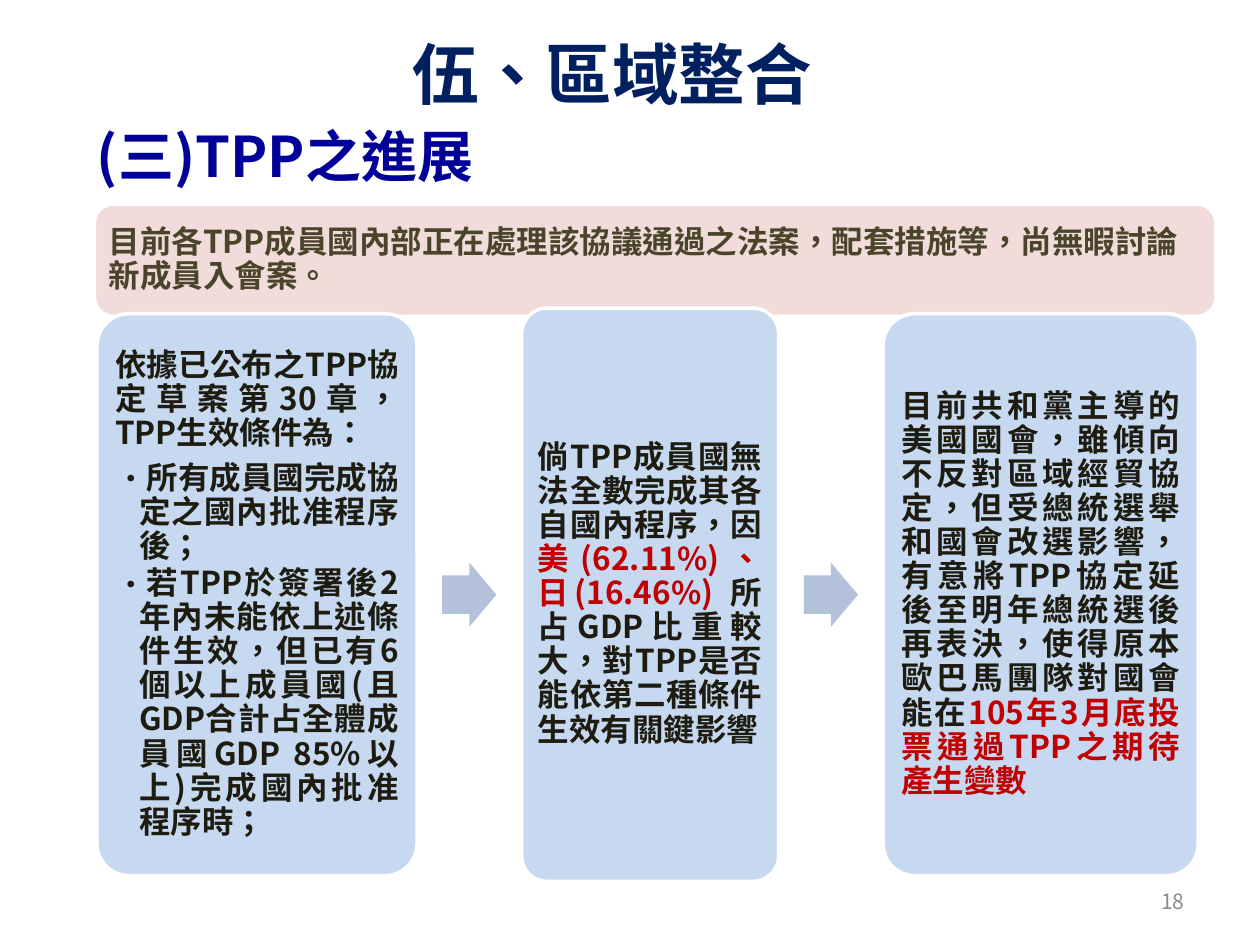
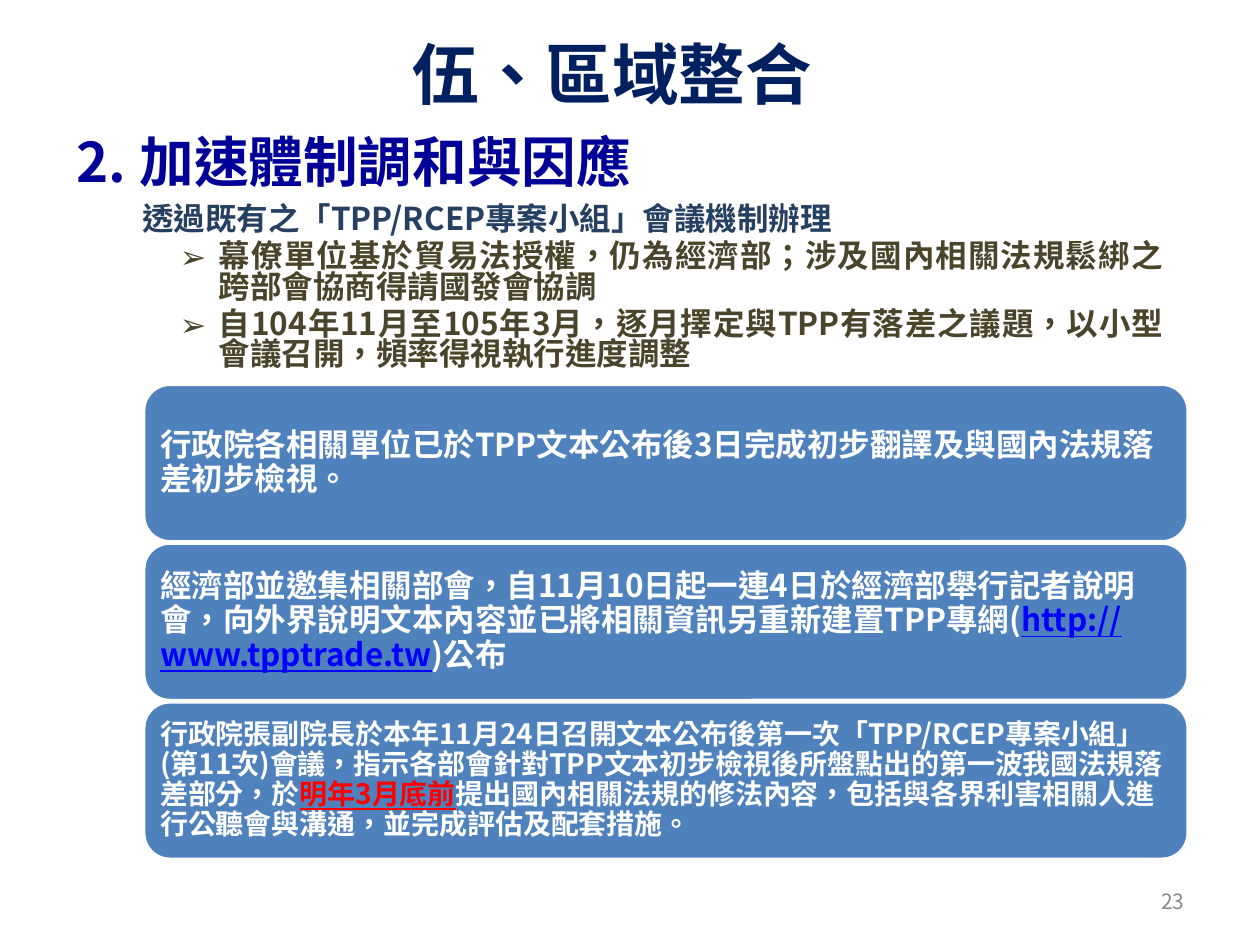
from dataclasses import dataclass
from typing import Optional

from lxml.etree import SubElement
from pptx import Presentation
from pptx.dml.color import RGBColor
from pptx.enum.shapes import MSO_SHAPE
from pptx.enum.text import MSO_ANCHOR, PP_ALIGN
from pptx.oxml.ns import qn
from pptx.util import Inches, Pt

FONT = "Noto Sans CJK SC"
WHITE, NAVY, BLUE, GREY = "FFFFFF", "002060", "000099", "898989"
INK, OLIVE, STEEL = "1E1C11", "4A452A", "254061"
RED, BRIGHT_RED, LINK = "C00000", "FF0000", "0000FF"
PINK, PALE, ARROW, PANEL = "F2DCDB", "C6D9F1", "B3C1DB", "4F81BD"
INSET = 0.07


@dataclass
class Run:
    text: str
    color: Optional[str] = None
    underline: bool = False


@dataclass
class Para:
    runs: list[Run]
    align: PP_ALIGN = PP_ALIGN.LEFT
    line: float = 1.0
    before: float = 0
    after: float = 0
    left: float = 0
    hang: float = 0
    bullet: str = ""
    number: int = 0


@dataclass
class Style:
    color: str
    size: float = 18
    bold: bool = True
    anchor: MSO_ANCHOR = MSO_ANCHOR.MIDDLE
    inset: Optional[float] = None
    wrap: bool = True


@dataclass
class Card:
    width: float
    height: float
    paras: list[Para]


def rgb(color: str) -> RGBColor:
    return RGBColor.from_string(color)


def write(tf, paras: list[Para], style: Style) -> None:
    """Fill a text frame with styled paragraphs."""
    frame = {"word_wrap": style.wrap, "vertical_anchor": style.anchor}
    if style.inset is not None:
        for side in ("left", "top", "right", "bottom"):
            frame[f"margin_{side}"] = Inches(style.inset)
    for name, value in frame.items():
        setattr(tf, name, value)
    for i, para in enumerate(paras):
        p = tf.add_paragraph() if i else tf.paragraphs[0]
        pPr = p._p.get_or_add_pPr()
        # Punctuation stays inside the text area
        layout = {"marL": Inches(para.left), "indent": -Inches(para.hang), "hangingPunct": 0}
        for name, value in layout.items():
            pPr.set(name, str(value))
        if para.bullet:
            SubElement(pPr, qn("a:buFont"), typeface=FONT)
            SubElement(pPr, qn("a:buChar"), char=para.bullet)
        elif para.number:
            SubElement(pPr, qn("a:buAutoNum"), type="arabicPeriod", startAt=str(para.number))
        spacing = {"alignment": para.align, "line_spacing": para.line,
                   "space_before": Pt(para.before), "space_after": Pt(para.after)}
        for name, value in spacing.items():
            setattr(p, name, value)
        for run in para.runs:
            r = p.add_run()
            r.text = run.text
            font = {"name": FONT, "size": Pt(style.size), "bold": style.bold,
                    "underline": run.underline}
            for name, value in font.items():
                setattr(r.font, name, value)
            r.font.color.rgb = rgb(run.color or style.color)
            rPr = r._r.get_or_add_rPr()
            rPr.set("lang", "zh-TW")
            SubElement(rPr, qn("a:ea"), typeface=FONT)


def add_text(slide, x: float, y: float, w: float, h: float,
             paras: list[Para], style: Style) -> None:
    sp = slide.shapes.add_textbox(Inches(x), Inches(y), Inches(w), Inches(h))
    write(sp.text_frame, paras, style)


def add_box(slide, kind: MSO_SHAPE, x: float, y: float, w: float, h: float,
            fill: str, line: Optional[str] = WHITE, adj: tuple = ()):
    sp = slide.shapes.add_shape(kind, Inches(x), Inches(y), Inches(w), Inches(h))
    sp.shadow.inherit = False
    sp.fill.solid()
    sp.fill.fore_color.rgb = rgb(fill)
    if line:
        sp.line.color.rgb = rgb(line)
        sp.line.width = Pt(2)
    else:
        sp.line.fill.background()
    for i, value in enumerate(adj):
        sp.adjustments[i] = value
    return sp


def add_page(prs, number: int):
    """Blank slide with the shared chapter title and page number."""
    slide = prs.slides.add_slide(prs.slide_layouts[6])
    add_text(slide, 3.16, 0.21, 3.4, 0.74,
             [Para([Run("伍、區域整合")], PP_ALIGN.CENTER)],
             Style(NAVY, 38, anchor=MSO_ANCHOR.TOP, wrap=False))
    add_text(slide, 7.17, 6.95, 2.33, 0.4,
             [Para([Run(str(number))], PP_ALIGN.RIGHT)], Style(GREY, 12, False))
    return slide


def block(*runs: Run, align: PP_ALIGN = PP_ALIGN.JUSTIFY) -> Para:
    return Para(list(runs), align, line=0.9, after=6)


def condition(text: str) -> Para:
    return Para([Run(text)], PP_ALIGN.JUSTIFY, line=0.9, after=2,
                left=0.19, hang=0.19, bullet="•")


def task(text: str) -> Para:
    return Para([Run(text, OLIVE)], PP_ALIGN.JUSTIFY, line=0.8, before=4,
                left=0.81, hang=0.31, bullet="➢")


CARDS = [
    Card(2.54, 4.46, [
        block(Run("依據已公布之TPP協定草案第30章，TPP生效條件為：")),
        condition("所有成員國完成協定之國內批准程序後；"),
        condition("若TPP於簽署後2年內未能依上述條件生效，但已有6個以上成員國"
                  "(且GDP合計占全體成員國GDP 85%以上)完成國內批准程序時；"),
    ]),
    Card(2.04, 4.55, [block(
        Run("倘TPP成員國無法全數完成其各自國內程序，因"),
        Run("美(62.11%)、日(16.46%) ", RED),
        Run("所占GDP比重較大，對TPP是否能依第二種條件生效有關鍵影響"),
    )]),
    Card(2.5, 4.46, [block(
        Run("目前共和黨主導的美國國會，雖傾向不反對區域經貿協定，但受總統選舉和國會改選影響，"
            "有意將TPP協定延後至明年總統選後再表決，使得原本歐巴馬團隊對國會能在"),
        Run("105年3月底投票通過TPP之期待產生變數", RED),
    )]),
]

PANELS = [
    (18, [Run("行政院各相關單位已於TPP文本公布後3日完成初步翻譯及與國內法規落差初步檢視。")]),
    (18, [Run("經濟部並邀集相關部會，自11月10日起一連4日於經濟部舉行記者說明會，"
              "向外界說明文本內容並已將相關資訊另重新建置TPP專網("),
          Run("http://www.tpptrade.tw", LINK, True),
          Run(")公布")]),
    (16, [Run("行政院張副院長於本年11月24日召開文本公布後第一次「TPP/RCEP專案小組」(第11次)會議，"
              "指示各部會針對TPP文本初步檢視後所盤點出的第一波我國法規落差部分，於"),
          Run("明年3月底前", BRIGHT_RED, True),
          Run("提出國內相關法規的修法內容，包括與各界利害相關人進行公聽會與溝通，"
              "並完成評估及配套措施。")]),
]


def build_progress(prs) -> None:
    slide = add_page(prs, 18)
    add_text(slide, 0.67, 0.85, 8.69, 0.77,
             [Para([Run("(三)TPP之進展")])], Style(BLUE, 32))
    # Summary band
    band = add_box(slide, MSO_SHAPE.ROUNDED_RECTANGLE, 0.75, 1.62, 8.9, 0.89, PINK)
    write(band.text_frame,
          [block(Run("目前各TPP成員國內部正在處理該協議通過之法案，配套措施等，尚無暇討論新成員入會案。"),
                 align=PP_ALIGN.LEFT)],
          Style(OLIVE, inset=INSET))
    # Cards joined by arrows, all centred on one line
    x, middle, gap, arrow_w, arrow_h = 0.77, 4.72, 0.2, 0.43, 0.51
    for i, card in enumerate(CARDS):
        if i:
            add_box(slide, MSO_SHAPE.RIGHT_ARROW, x + gap, middle - arrow_h / 2,
                    arrow_w, arrow_h, ARROW, None, (0.6, 0.5))
            x += arrow_w + 2 * gap
        sp = add_box(slide, MSO_SHAPE.ROUNDED_RECTANGLE, x, middle - card.height / 2,
                     card.width, card.height, PALE, adj=(0.1,))
        write(sp.text_frame, card.paras, Style(INK, inset=INSET))
        x += card.width


def build_response(prs) -> None:
    slide = add_page(prs, 23)
    add_text(slide, 0.51, 0.92, 9, 0.71,
             [Para([Run("加速體制調和與因應")], left=0.5, hang=0.5, number=2)],
             Style(BLUE, 31.2))
    # Working arrangements
    add_text(slide, 0.83, 1.53, 8.5, 1.5, [
        Para([Run("透過既有之「TPP/RCEP專案小組」會議機制辦理")], PP_ALIGN.JUSTIFY, left=0.2),
        task("幕僚單位基於貿易法授權，仍為經濟部；涉及國內相關法規鬆綁之跨部會協商得請國發會協調"),
        task("自104年11月至105年3月，逐月擇定與TPP有落差之議題，以小型會議召開，頻率得視執行進度調整"),
    ], Style(STEEL, anchor=MSO_ANCHOR.TOP))
    # Stacked panels
    for i, (size, runs) in enumerate(PANELS):
        sp = add_box(slide, MSO_SHAPE.ROUNDED_RECTANGLE, 1.14, 3.05 + 1.26 * i, 8.29, 1.25, PANEL)
        write(sp.text_frame, [block(*runs, align=PP_ALIGN.LEFT)],
              Style(WHITE, size, inset=INSET))


def main() -> None:
    prs = Presentation()
    prs.slide_width, prs.slide_height = Inches(10), Inches(7.5)
    build_progress(prs)
    build_response(prs)
    prs.save("out.pptx")


if __name__ == "__main__":
    main()
